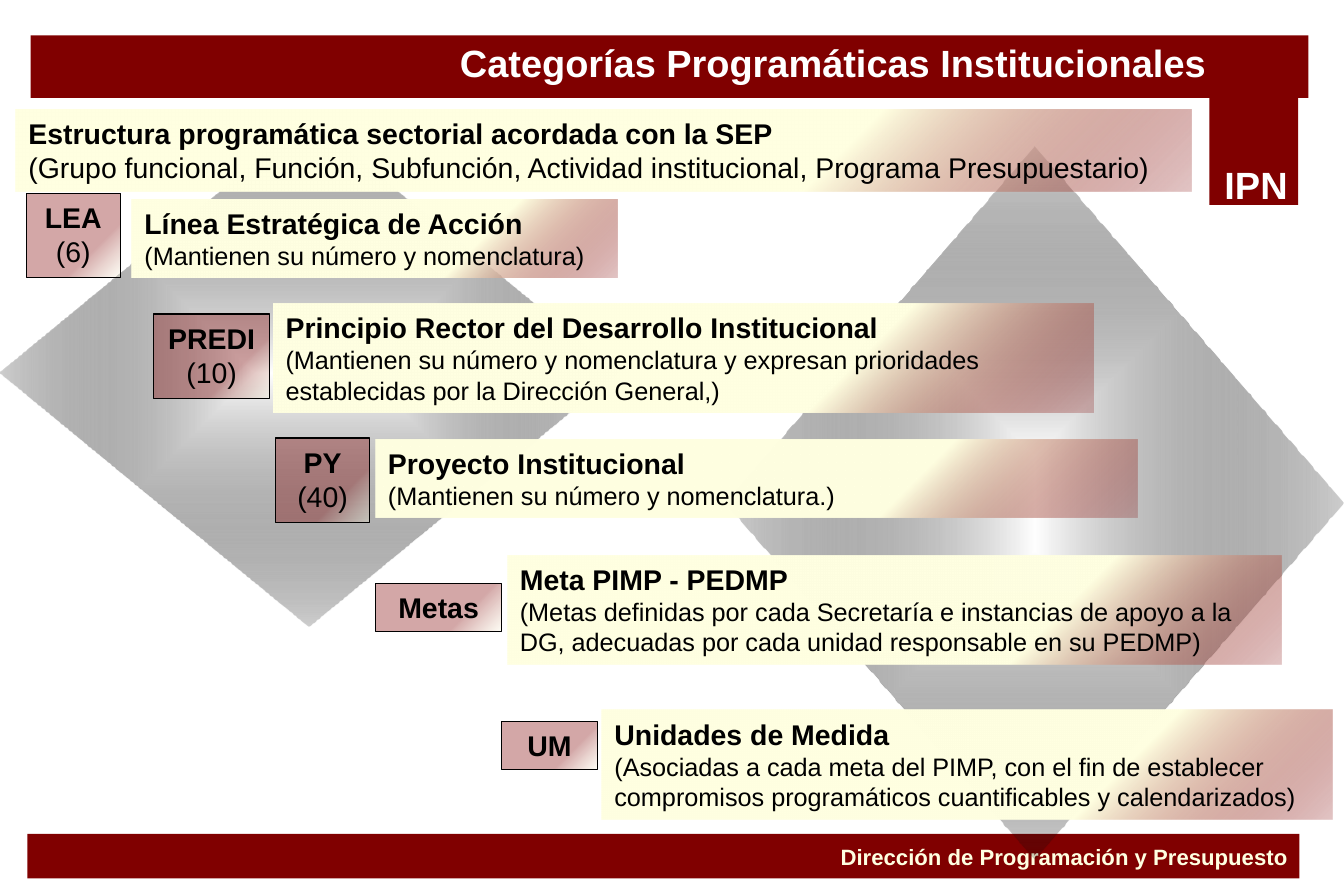
from pptx import Presentation
from pptx.dml.color import RGBColor
from pptx.enum.shapes import MSO_SHAPE
from pptx.enum.text import MSO_ANCHOR, MSO_AUTO_SIZE, PP_ALIGN
from pptx.oxml import parse_xml
from pptx.oxml.ns import nsdecls, qn
from pptx.util import Inches, Pt

RECTANGLE, DIAMOND = MSO_SHAPE.RECTANGLE, MSO_SHAPE.DIAMOND
LEFT, CENTER, RIGHT = PP_ALIGN.LEFT, PP_ALIGN.CENTER, PP_ALIGN.RIGHT
TOP, MIDDLE = MSO_ANCHOR.TOP, MSO_ANCHOR.MIDDLE

FONT = "Arial"
MAROON, CREAM, WHITE, BLACK = "800000", "FFFFE1", "FFFFFF", "000000"
PAGE_SIZE = Pt(850.5), Pt(567)  # three to two

TITLE = "Categorías Programáticas Institucionales"
FOOTER = "Dirección de Programación y Presupuesto"
INSTITUTE = "IPN"
# A line break (\v) separates a bold first line from a regular second one
SECTOR = (
    "Estructura programática sectorial acordada con la SEP\v"
    "(Grupo funcional, Función, Subfunción, Actividad institucional, Programa Presupuestario)"
)
# tag, tag position, panel heading, panel detail, panel position
CATEGORIES = [
    ("LEA\v(6)", (0.23, 1.7, 0.83, 0.74),
     "Línea Estratégica de Acción",
     "(Mantienen su número y nomenclatura)",
     (1.16, 1.75, 4.27, 0.69)),
    ("PREDI\v(10)", (1.35, 2.76, 1.02, 0.74),
     "Principio Rector del Desarrollo Institucional",
     "(Mantienen su número y nomenclatura y expresan prioridades "
     "establecidas por la Dirección General,)",
     (2.4, 2.67, 7.21, 0.96)),
    ("PY\v(40)", (2.42, 3.85, 0.83, 0.74),
     "Proyecto Institucional",
     "(Mantienen su número y nomenclatura.)",
     (3.3, 3.86, 6.7, 0.69)),
    ("Metas", (3.3, 5.13, 1.11, 0.42),
     "Meta PIMP - PEDMP",
     "(Metas definidas por cada Secretaría e instancias de apoyo a la DG, "
     "adecuadas por cada unidad responsable en su PEDMP)",
     (4.46, 4.88, 6.8, 0.96)),
    ("UM", (4.41, 6.34, 0.84, 0.42),
     "Unidades de Medida",
     "(Asociadas a cada meta del PIMP, con el fin de establecer "
     "compromisos programáticos cuantificables y calendarizados)",
     (5.29, 6.24, 6.42, 0.96)),
]
DIAMONDS = [(0, 1.04, 5.43, 4.47), (6.38, 1.29, 5.43, 6.26)]

# Gradient stops: position %, colour, opacity %
TAG_STOPS = [(50, MAROON, 34), (69, MAROON, 34), (100, CREAM, 27)]
PANEL_STOPS = [(50, CREAM, 100), (69, CREAM, 100), (100, MAROON, 22)]
DIAMOND_STOPS = [(0, WHITE, 100), (100, BLACK, 19)]
DIAGONAL = '<a:lin ang="2700000" scaled="1"/>'
FROM_CENTRE = ('<a:path path="shape"><a:fillToRect l="50000" t="50000" '
               'r="50000" b="50000"/></a:path>')


def color(value):
    return RGBColor.from_string(value)


def add_block(page, kind, place, fill=None):
    block = page.shapes.add_shape(kind, *map(Inches, place))
    block.shadow.inherit = False
    block.line.fill.background()
    if fill:
        block.fill.solid()
        block.fill.fore_color.rgb = color(fill)
    return block


def set_gradient(block, stops, direction):
    """Fill with a gradient whose stops may be see-through."""
    stop_xml = "".join(
        f'<a:gs pos="{position * 1000}"><a:srgbClr val="{value}">'
        f'<a:alpha val="{opacity * 1000}"/></a:srgbClr></a:gs>'
        for position, value, opacity in stops)
    gradient = parse_xml(
        f'<a:gradFill {nsdecls("a")} rotWithShape="1">'
        f'<a:gsLst>{stop_xml}</a:gsLst>{direction}</a:gradFill>')
    block.fill.background()
    properties = block._element.spPr
    properties.replace(properties.find(qn("a:noFill")), gradient)


def write(box, lines, align=LEFT, value=BLACK, anchor=TOP, inset=(0.11, 0.06)):
    """Write (text, size, bold) paragraphs; text after a line break is regular."""
    frame = box.text_frame
    frame.word_wrap = True
    frame.auto_size = MSO_AUTO_SIZE.NONE
    frame.vertical_anchor = anchor
    frame.margin_left = frame.margin_right = Inches(inset[0])
    frame.margin_top = frame.margin_bottom = Inches(inset[1])
    for index, (text, size, bold) in enumerate(lines):
        para = frame.add_paragraph() if index else frame.paragraphs[0]
        para.text = text
        para.alignment = align
        para.font.name = FONT
        para.font.size = Pt(size)
        para.font.bold = bold
        para.font.color.rgb = color(value)
        for span in para.runs[1:]:
            span.font.bold = False


def add_panel(page, place, lines):
    panel = add_block(page, RECTANGLE, place)
    set_gradient(panel, PANEL_STOPS, DIAGONAL)
    write(panel, lines)


def add_tag(page, place, text):
    tag = add_block(page, RECTANGLE, place)
    set_gradient(tag, TAG_STOPS, DIAGONAL)
    tag.line.color.rgb = color(BLACK)
    tag.line.width = Pt(0.75)
    write(tag, [(text, 18, True)], CENTER)


def main():
    deck = Presentation()
    deck.slide_width, deck.slide_height = PAGE_SIZE
    page = deck.slides.add_slide(deck.slide_layouts[5])

    add_block(page, RECTANGLE, (10.63, 0.55, 0.78, 1.25), MAROON)
    add_block(page, RECTANGLE, (0.27, 0.31, 11.23, 0.55), MAROON)
    institute = page.shapes.add_textbox(*map(Inches, (10.57, 1.37, 0.94, 0.5)))
    write(institute, [(INSTITUTE, 24, True)], CENTER, WHITE, inset=(0.1, 0.05))
    footer = add_block(page, RECTANGLE, (0.24, 7.33, 11.18, 0.39), MAROON)
    write(footer, [(FOOTER, 14, True)], RIGHT, CREAM, MIDDLE, (0.1, 0.05))

    for place in DIAMONDS:
        set_gradient(add_block(page, DIAMOND, place), DIAMOND_STOPS, FROM_CENTRE)

    title = page.shapes.title
    title.left, title.top, title.width, title.height = map(
        Inches, (2.76, 0.29, 7.95, 0.52))
    write(title, [(TITLE, 24, True)], RIGHT, WHITE)
    title._element.getparent().append(title._element)  # in front of its band

    add_panel(page, (0.14, 0.96, 10.33, 0.72), [(SECTOR, 18, True)])
    for tag, tag_place, heading, detail, panel_place in CATEGORIES:
        add_tag(page, tag_place, tag)
        add_panel(page, panel_place, [(heading, 18, True), (detail, 16, False)])

    deck.save("out.pptx")


if __name__ == "__main__":
    main()
